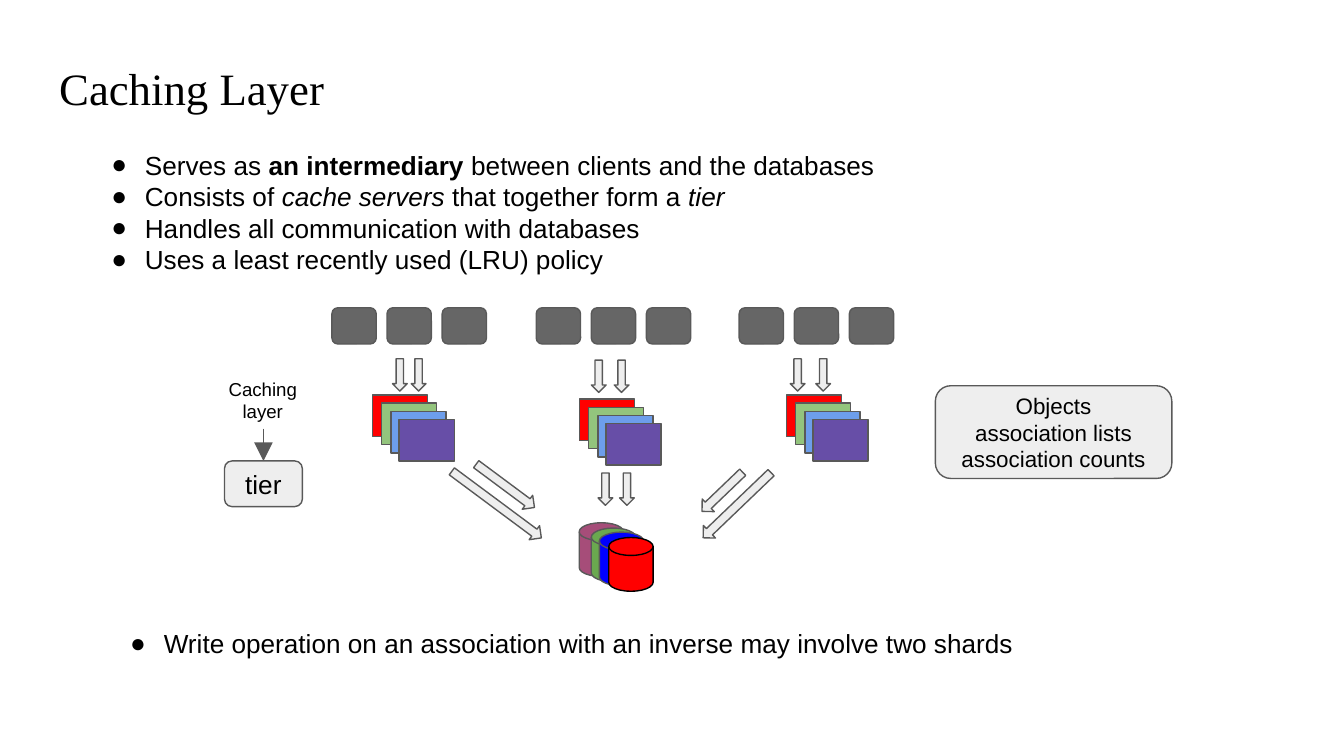
from lxml import etree
from pptx import Presentation
from pptx.dml.color import RGBColor
from pptx.enum.shapes import MSO_CONNECTOR, MSO_SHAPE
from pptx.enum.text import MSO_ANCHOR, MSO_AUTO_SIZE, PP_ALIGN
from pptx.oxml.ns import qn
from pptx.util import Inches, Pt

GREY, PALE = "595959", "EEEEEE"


def add_block(kind, left, top, width, height, fill, line=GREY, rotation=0):
    """Add a filled, outlined shape without shadow."""
    block = slide.shapes.add_shape(
        kind, Inches(left), Inches(top), Inches(width), Inches(height))
    block.shadow.inherit = False
    block.fill.solid()
    block.fill.fore_color.rgb = RGBColor.from_string(fill)
    block.line.color.rgb = RGBColor.from_string(line)
    block.line.width = Pt(0.75)
    block.rotation = rotation
    return block


def write(frame, paragraphs, size, align=PP_ALIGN.LEFT, anchor=MSO_ANCHOR.TOP,
          font="Arial", bullet=False):
    """Fill a text frame; each paragraph is a list of (text, style) runs."""
    frame.word_wrap = True
    frame.auto_size = MSO_AUTO_SIZE.NONE
    frame.vertical_anchor = anchor
    frame.margin_left = frame.margin_right = Inches(0.1)
    frame.margin_top = frame.margin_bottom = Inches(0.1)
    for index, runs in enumerate(paragraphs):
        paragraph = frame.add_paragraph() if index else frame.paragraphs[0]
        paragraph.alignment = align
        if bullet:
            properties = paragraph._p.get_or_add_pPr()
            properties.set("marL", str(Inches(0.5)))
            properties.set("indent", str(Inches(-0.25)))
            etree.SubElement(properties, qn("a:buFont"), typeface="Arial")
            etree.SubElement(properties, qn("a:buChar"), char="●")
        for text, style in runs:
            run = paragraph.add_run()
            run.text = text
            run.font.name = font
            run.font.size = Pt(size)
            run.font.bold = style == "bold"
            run.font.italic = style == "italic"
            run.font.color.rgb = RGBColor.from_string("000000")


prs = Presentation()
prs.slide_width, prs.slide_height = Inches(10), Inches(10 * 9 / 16)
slide = prs.slides.add_slide(prs.slide_layouts[5])

title = slide.shapes.title
title.left, title.top = Inches(0.34), Inches(0.35)
title.width, title.height = Inches(9.32), Inches(0.48)
write(title.text_frame, [[("Caching Layer", "")]], 24, font="Times New Roman")

# Text boxes
features = [
    [("Serves as ", ""), ("an intermediary", "bold"),
     (" between clients and the databases", "")],
    [("Consists of ", ""), ("cache servers", "italic"),
     (" that together form a ", ""), ("tier", "italic")],
    [("Handles all communication with databases", "")],
    [("Uses a least recently used (LRU) policy", "")],
]
write_note = [[("Write operation on an association with an inverse may involve two shards", "")]]
layer_label = [[("Caching layer", "")]]
for left, top, width, height, paragraphs, size, align, bullet in [
    (0.48, 1.01, 6.24, 1.09, features, 14, PP_ALIGN.LEFT, True),
    (1.59, 2.71, 0.73, 0.48, layer_label, 10, PP_ALIGN.CENTER, False),
    (0.62, 4.57, 7.72, 0.44, write_note, 14, PP_ALIGN.LEFT, True),
]:
    box = slide.shapes.add_textbox(
        Inches(left), Inches(top), Inches(width), Inches(height))
    write(box.text_frame, paragraphs, size, align, bullet=bullet)

# Labelled boxes
tier = add_block(MSO_SHAPE.ROUNDED_RECTANGLE, 1.67, 3.43, 0.58, 0.34, PALE)
write(tier.text_frame, [[("tier", "")]], 14, PP_ALIGN.CENTER, MSO_ANCHOR.MIDDLE)
cached_data = add_block(MSO_SHAPE.ROUNDED_RECTANGLE, 6.96, 2.87, 1.76, 0.69, PALE)
write(cached_data.text_frame,
      [[("Objects", "")], [("association lists association counts", "")]],
      12, PP_ALIGN.CENTER, MSO_ANCHOR.MIDDLE)

tier_arrow = slide.shapes.add_connector(
    MSO_CONNECTOR.STRAIGHT, Inches(1.96), Inches(3.19), Inches(1.96), Inches(3.43))
tier_arrow.line.color.rgb = RGBColor.from_string(GREY)
tier_arrow.line.width = Pt(0.75)
etree.SubElement(tier_arrow.line._get_or_add_ln(), qn("a:tailEnd"),
                 type="triangle", w="lg", len="lg")
etree.SubElement(tier_arrow._element.spPr, qn("a:effectLst"))

# Database shards
for left, top, fill, outline in [
    (4.31, 3.89, "A64D79", GREY), (4.4, 3.93, "6AA84F", GREY),
    (4.46, 3.96, "0000FF", GREY), (4.53, 4, "FF0000", "000000"),
]:
    add_block(MSO_SHAPE.FLOWCHART_MAGNETIC_DISK, left, top, 0.33, 0.4, fill, outline)

# Each group: clients, the arrows below them and a stack of cache servers
server_offsets = [(0, 0, "FF0000"), (0.07, 0.06, "93C47D"),
                  (0.14, 0.12, "6D9EEB"), (0.2, 0.18, "674EA7")]
for clients_left, servers_left, servers_top, arrow_lefts, arrows_top in [
    (2.47, 2.77, 2.94, (2.92, 3.06), 2.67),
    (3.99, 4.31, 2.97, (4.4, 4.57), 2.68),
    (5.5, 5.85, 2.94, (5.88, 6.07), 2.67),
]:
    for column in range(3):
        add_block(MSO_SHAPE.ROUNDED_RECTANGLE, clients_left + column * 0.41, 2.29,
                  0.33, 0.27, "666666")
    for dx, dy, fill in server_offsets:
        add_block(MSO_SHAPE.RECTANGLE, servers_left + dx, servers_top + dy,
                  0.41, 0.31, fill)
    for left in arrow_lefts:
        add_block(MSO_SHAPE.DOWN_ARROW, left, arrows_top, 0.11, 0.24, PALE)

# Arrows from the cache servers to the databases
for kind, left, top, width, height, rotation in [
    (MSO_SHAPE.RIGHT_ARROW, 3.28, 3.69, 0.83, 0.13, 36.6),
    (MSO_SHAPE.RIGHT_ARROW, 3.49, 3.55, 0.54, 0.13, 36.6),
    (MSO_SHAPE.DOWN_ARROW, 4.45, 3.52, 0.11, 0.24, 0),
    (MSO_SHAPE.DOWN_ARROW, 4.61, 3.52, 0.11, 0.24, 0),
    (MSO_SHAPE.DOWN_ARROW, 5.42, 3.41, 0.13, 0.7, 46.2),
    (MSO_SHAPE.DOWN_ARROW, 5.31, 3.45, 0.13, 0.42, 46.2),
]:
    add_block(kind, left, top, width, height, PALE, rotation=rotation)

prs.save("out.pptx")
